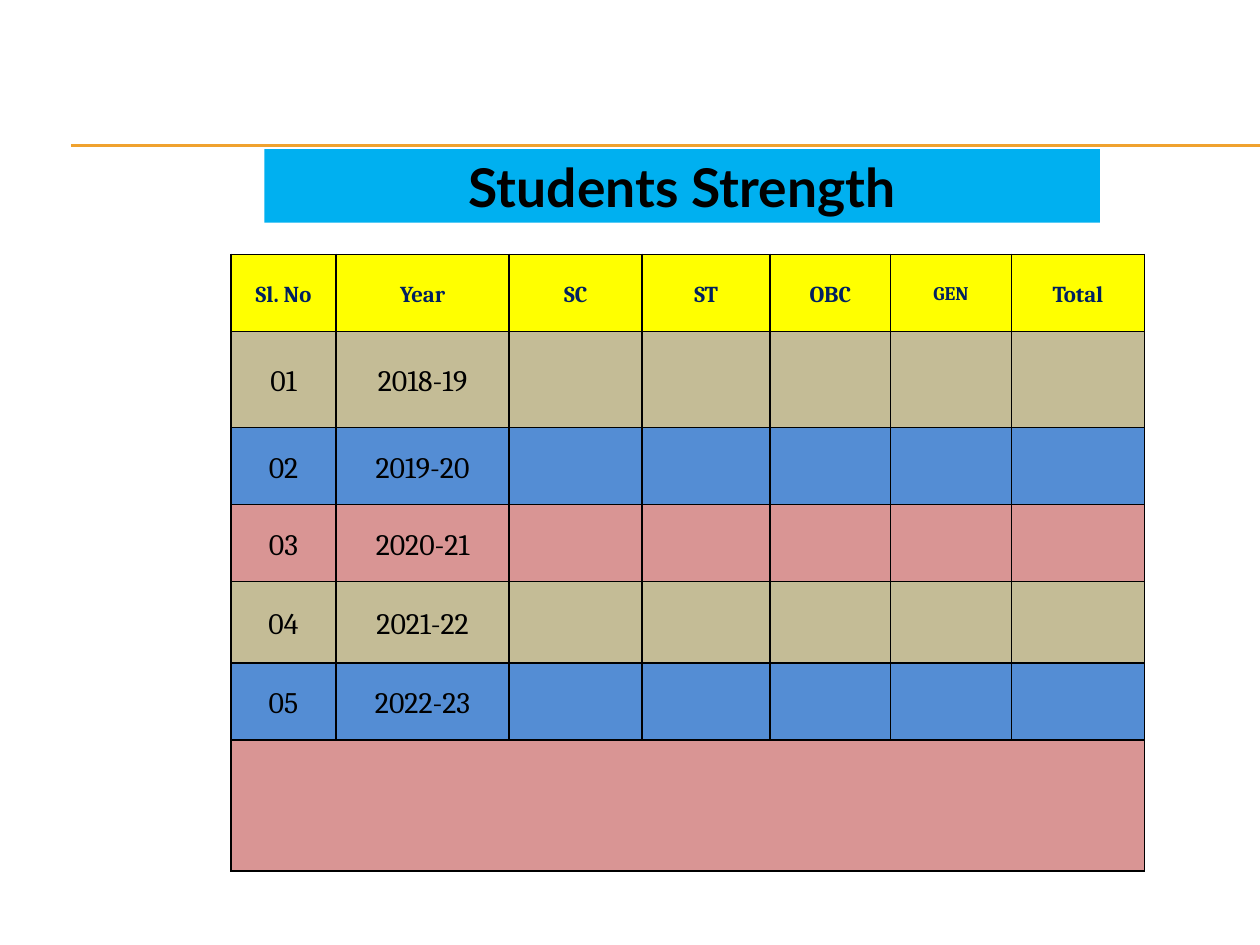
import lxml.etree
import pptx
import pptx.dml.color
import pptx.enum.shapes
import pptx.enum.text
import pptx.oxml.ns
import pptx.util

Pt = pptx.util.Pt
RGBColor = pptx.dml.color.RGBColor
CENTER = pptx.enum.text.PP_ALIGN.CENTER
MIDDLE = pptx.enum.text.MSO_ANCHOR.MIDDLE
qn = pptx.oxml.ns.qn

BLACK = RGBColor(0x00, 0x00, 0x00)
NAVY = RGBColor(0x00, 0x20, 0x60)
GOLD = RGBColor(0xF0, 0xA2, 0x2E)
SKY = RGBColor(0x00, 0xB0, 0xF0)
YELLOW = RGBColor(0xFF, 0xFF, 0x00)
TAN = RGBColor(0xC4, 0xBC, 0x96)
BLUE = RGBColor(0x54, 0x8D, 0xD4)
ROSE = RGBColor(0xD9, 0x95, 0x94)
BAND_COLORS = [TAN, BLUE, ROSE]

TITLE_FONT = {"name": "Lato", "size": Pt(30.5), "bold": True}
HEADER_FONT = {"name": "Cambria", "size": Pt(13), "bold": True}
GEN_FONT = {**HEADER_FONT, "size": Pt(11)}
BODY_FONT = {"name": "Cambria", "size": Pt(17), "bold": False}
TITLE_FRAME = {
    "margin_left": Pt(5), "margin_right": Pt(5),
    "margin_top": Pt(2), "margin_bottom": Pt(2),
    "vertical_anchor": MIDDLE, "word_wrap": True,
    "auto_size": pptx.enum.text.MSO_AUTO_SIZE.NONE,
}
CELL_FORMAT = {
    "margin_left": Pt(3), "margin_right": Pt(3),
    "margin_top": 0, "margin_bottom": 0, "vertical_anchor": MIDDLE,
}

HEADINGS = ["Sl. No", "Year", "SC", "ST", "OBC", "GEN", "Total"]
YEARS = ["2018-19", "2019-20", "2020-21", "2021-22", "2022-23"]
COLUMN_WIDTHS = [60, 99, 76, 73, 69, 69, 76]
ROW_HEIGHTS = [44, 55, 44, 44, 46.5, 44, 75]


def apply_format(target, values):
    for name, value in values.items():
        setattr(target, name, value)


def write_text(paragraph, text, font, color, line_spacing):
    paragraph.alignment = CENTER
    paragraph.line_spacing = line_spacing
    run = paragraph.add_run()
    run.text = text
    apply_format(run.font, font)
    run.font.color.rgb = color


def add_rules(slide, left, top, width, gap):
    for y in (top, top + gap):
        rule = slide.shapes.add_connector(
            pptx.enum.shapes.MSO_CONNECTOR.STRAIGHT,
            Pt(left), Pt(y), Pt(left + width), Pt(y))
        rule.line.color.rgb = GOLD
        rule.line.width = Pt(0.75)
        lxml.etree.SubElement(rule._element.spPr, qn("a:effectLst"))


def place_title(slide, left, top, width, height):
    title = slide.shapes.title
    apply_format(title, {"left": Pt(left), "top": Pt(top),
                         "width": Pt(width), "height": Pt(height)})
    title.fill.solid()
    title.fill.fore_color.rgb = SKY
    apply_format(title.text_frame, TITLE_FRAME)
    write_text(title.text_frame.paragraphs[0], "Students Strength",
               TITLE_FONT, BLACK, 1.0)


def add_borders(cell):
    properties = cell._tc.get_or_add_tcPr()
    for position, side in enumerate(("lnL", "lnR", "lnT", "lnB")):
        border = lxml.etree.Element(qn(f"a:{side}"), w=str(Pt(1)))
        fill = lxml.etree.SubElement(border, qn("a:solidFill"))
        lxml.etree.SubElement(fill, qn("a:srgbClr"), val=str(BLACK))
        properties.insert(position, border)


def add_strength_table(slide, left, top):
    table = slide.shapes.add_table(
        len(ROW_HEIGHTS), len(COLUMN_WIDTHS), Pt(left), Pt(top),
        Pt(sum(COLUMN_WIDTHS)), Pt(sum(ROW_HEIGHTS))).table
    apply_format(table, {"first_row": False, "horz_banding": False})
    for column, width in zip(table.columns, COLUMN_WIDTHS):
        column.width = Pt(width)

    for index, (row, height) in enumerate(zip(table.rows, ROW_HEIGHTS)):
        row.height = Pt(height)
        for cell in row.cells:
            apply_format(cell, CELL_FORMAT)
            cell.fill.solid()
            cell.fill.fore_color.rgb = BAND_COLORS[(index - 1) % 3] if index else YELLOW
            add_borders(cell)

    for column, heading in enumerate(HEADINGS):
        font = GEN_FONT if heading == "GEN" else HEADER_FONT
        write_text(table.cell(0, column).text_frame.paragraphs[0],
                   heading, font, NAVY, 1.15)
    for number, year in enumerate(YEARS, start=1):
        for column, text in enumerate((f"{number:02}", year)):
            write_text(table.cell(number, column).text_frame.paragraphs[0],
                       text, BODY_FONT, BLACK, 1.15)

    last_row = len(ROW_HEIGHTS) - 1
    table.cell(last_row, 0).merge(table.cell(last_row, len(COLUMN_WIDTHS) - 1))


def main():
    presentation = pptx.Presentation()
    apply_format(presentation, {"slide_width": Pt(720), "slide_height": Pt(540)})
    slide = presentation.slides.add_slide(presentation.slide_layouts[5])
    add_rules(slide, 40.5, 82.7, 679.5, 0.7)
    place_title(slide, 151, 85.2, 477.5, 42)
    add_strength_table(slide, 132, 145.3)
    presentation.save("out.pptx")


if __name__ == "__main__":
    main()
